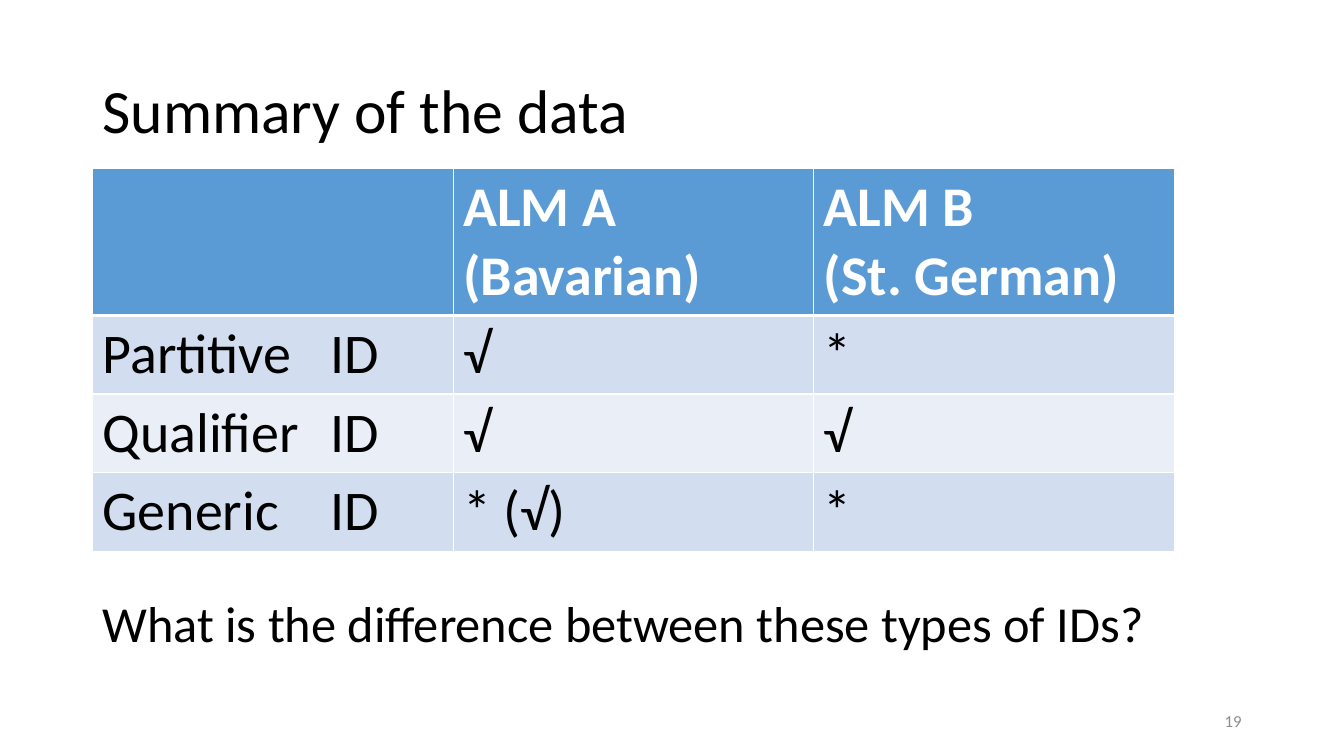
from lxml import etree
from pptx import Presentation
from pptx import util as u
from pptx.dml.color import RGBColor
from pptx.enum import text
from pptx.oxml import ns


def color(value):
    return RGBColor.from_string(value)


def write(frame, words, size=40, ink="000000", bold=False,
          align=text.PP_ALIGN.LEFT, spacing=1.0):
    para = frame.paragraphs[0]
    para.alignment = align
    para.line_spacing = spacing
    for number, line in enumerate(words.split("\n")):
        if number:
            para.add_line_break()
        span = para.add_run()
        span.text = line
        span.font.name = "Calibri"
        span.font.size = u.Pt(size)
        span.font.bold = bold
        span.font.color.rgb = color(ink)
    return para


deck = Presentation()
deck.slide_width = u.Cm(33.87)
deck.slide_height = u.Cm(19.05)
page = deck.slides.add_slide(deck.slide_layouts[5])
left = u.Cm(2.33)

# Title
title = page.shapes.title
title.left, title.top = left, u.Cm(1.02)
title.width, title.height = u.Cm(29.21), u.Cm(3.68)
title.text_frame.vertical_anchor = text.MSO_ANCHOR.MIDDLE
write(title.text_frame, "Summary of the data", size=44, spacing=0.9)

# Table of judgements
rows = [
    ["", "ALM A (Bavarian)", "ALM B\n(St. German)"],
    ["Partitive\tID", "√", "*"],
    ["Qualifier\tID", "√", "√"],
    ["Generic\tID", "* (√)", "*"],
]
heights = [3.7, 1.98, 1.98, 1.98]
fills = ["5B9BD5", "D2DEEF", "EAEFF7", "D2DEEF"]
table = page.shapes.add_table(4, 3, left, u.Cm(4.25), u.Cm(27.27), u.Cm(sum(heights))).table
for column in table.columns:
    column.width = u.Cm(9.09)

for r, words in enumerate(rows):
    table.rows[r].height = u.Cm(heights[r])
    for c, word in enumerate(words):
        cell = table.cell(r, c)
        # White borders, with a thicker rule under the header
        thick = {(0, "lnB"), (1, "lnT")}
        for side in ("lnL", "lnR", "lnT", "lnB"):
            width = u.Pt(3 if (r, side) in thick else 1)
            border = etree.SubElement(cell._tc.get_or_add_tcPr(), ns.qn("a:" + side), w=str(width))
            paint = etree.SubElement(border, ns.qn("a:solidFill"))
            etree.SubElement(paint, ns.qn("a:srgbClr"), val="FFFFFF")
        cell.fill.solid()
        cell.fill.fore_color.rgb = color(fills[r])
        if not word:
            continue
        para = write(cell.text_frame, word, ink="000000" if r else "FFFFFF", bold=r == 0)
        # Align the "ID" part of the row labels
        if "\t" in word:
            stops = etree.SubElement(para._p.get_or_add_pPr(), ns.qn("a:tabLst"))
            etree.SubElement(stops, ns.qn("a:tab"), pos=str(u.Cm(5.75)), algn="l")

# Closing question
question = page.shapes.add_textbox(left, u.Cm(14.8), u.Cm(26.9), u.Cm(1.8))
question.text_frame.word_wrap = False
question.text_frame.auto_size = text.MSO_AUTO_SIZE.SHAPE_TO_FIT_TEXT
write(question.text_frame, "What is the difference between these types of IDs?", size=36)

# Page number
number_box = page.shapes.add_textbox(u.Cm(23.92), u.Cm(17.66), u.Cm(7.62), u.Cm(1.01))
number_box.text_frame.word_wrap = True
number_box.text_frame.vertical_anchor = text.MSO_ANCHOR.MIDDLE
write(number_box.text_frame, "19", size=12, ink="8C8C8C", align=text.PP_ALIGN.RIGHT)

deck.save("out.pptx")
